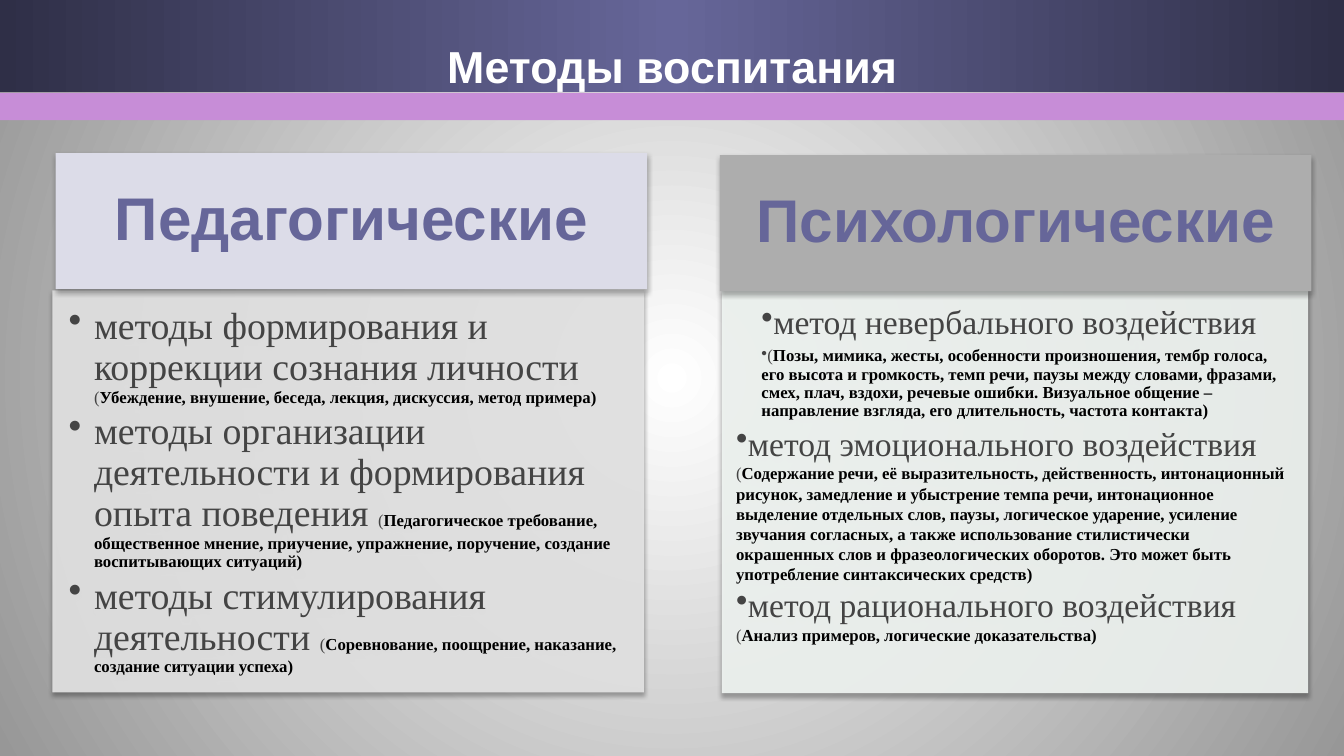
from dataclasses import dataclass
from lxml.etree import SubElement
from pptx import Presentation
from pptx.dml.color import RGBColor
from pptx.enum.shapes import MSO_SHAPE
from pptx.enum.text import MSO_ANCHOR, PP_ALIGN
from pptx.oxml.ns import qn
from pptx.util import Cm, Pt


@dataclass(frozen=True)
class Theme:
    sans: str = "Arial"
    serif: str = "Times New Roman"
    title: int = 32
    head: int = 43
    note: int = 12
    white: str = "FFFFFF"
    black: str = "000000"
    gray: str = "444444"
    violet: str = "666699"
    pink: str = "C78DD7"
    back: tuple = ((0, "FFFFFF"), (100, "979797"))
    band: tuple = ((0, "2F2F47"), (50, "666699"), (100, "2F2F47"))


THEME = Theme()
WIDE, HIGH = 33.87, 19.05
TITLE = "Методы воспитания"

# (lead, note, indent, hanging, line spacing, space after)
PANELS = [
    {
        "head": "Педагогические",
        "top": (1.4, 3.86, 14.91, 3.43, "DCDCE8"),
        "body": (1.32, 7.32, 14.91, 10.13, "E6E6E6"),
        "pads": (0.41, 0.41, 0.53, 0.61),
        "size": 27,
        "items": [
            ("методы формирования и коррекции сознания личности ",
             "Убеждение, внушение, беседа, лекция, дискуссия, метод примера)",
             0.64, -0.64, 0.9, 4),
            ("методы организации деятельности и формирования опыта поведения ",
             "Педагогическое требование, общественное мнение, приучение, "
             "упражнение, поручение, создание воспитывающих ситуаций)",
             0.64, -0.64, 0.9, 4),
            ("методы стимулирования деятельности ",
             "Соревнование, поощрение, наказание, создание ситуации успеха)",
             0.64, -0.64, 0.9, 4),
        ],
    },
    {
        "head": "Психологические",
        "top": (18.14, 3.91, 14.91, 3.43, "ADADAD"),
        "body": (18.19, 7.34, 14.78, 10.13, "F2F7F4"),
        "pads": (0.36, 0.36, 0.48, 0.53),
        "size": 24,
        "items": [
            ("метод невербального воздействия ", "", 0.64, 0, 0.9, 4),
            ("",
             "Позы, мимика, жесты, особенности произношения, тембр голоса, "
             "его высота и громкость, темп речи, паузы между словами, фразами, "
             "смех, плач, вздохи, речевые ошибки. Визуальное общение – "
             "направление взгляда, его длительность, частота контакта)",
             0.64, 0, 0.9, 2),
            ("метод эмоционального воздействия ",
             "Содержание речи, её выразительность, действенность, "
             "интонационный рисунок, замедление и убыстрение темпа речи, "
             "интонационное выделение отдельных слов, паузы, логическое "
             "ударение, усиление звучания согласных, а также использование "
             "стилистически окрашенных слов и фразеологических оборотов. "
             "Это может быть употребление синтаксических средств)",
             0, 0, 1.0, 0),
            ("метод рационального воздействия ",
             "Анализ примеров, логические доказательства)", 0, 0, 1.0, 0),
        ],
    },
]


def color(code):
    return RGBColor.from_string(code)


def blend(root, stops, round_=False):
    grad = root.find(".//" + qn("a:gradFill"))
    for child in list(grad):
        grad.remove(child)
    row = SubElement(grad, qn("a:gsLst"))
    for pos, code in stops:
        stop = SubElement(row, qn("a:gs"), pos=str(pos * 1000))
        SubElement(stop, qn("a:srgbClr"), val=code)
    if round_:
        way = SubElement(grad, qn("a:path"), path="circle")
        SubElement(way, qn("a:fillToRect"),
                   {side: "50000" for side in "ltrb"})
    else:
        SubElement(grad, qn("a:lin"), ang="0", scaled="0")


def block(slide, left, top, width, height, code):
    shape = slide.shapes.add_shape(
        MSO_SHAPE.RECTANGLE, Cm(left), Cm(top), Cm(width), Cm(height))
    shape.fill.solid()
    shape.fill.fore_color.rgb = color(code)
    shape.line.fill.background()
    shape.shadow.inherit = False
    return shape


def shade(shape):
    effects = shape.element.spPr.find(qn("a:effectLst"))
    drop = SubElement(effects, qn("a:outerShdw"), blurRad=str(Pt(3.5)),
                      dist=str(Pt(2.2)), dir="5400000", rotWithShape="0")
    tint = SubElement(drop, qn("a:srgbClr"), val=THEME.black)
    SubElement(tint, qn("a:alpha"), val="32000")


def frame(shape, pads, anchor):
    text = shape.text_frame
    text.word_wrap = True
    text.vertical_anchor = anchor
    (text.margin_left, text.margin_top,
     text.margin_right, text.margin_bottom) = [Cm(pad) for pad in pads]
    return text


def label(shape, words, size, code, pads):
    para = frame(shape, pads, MSO_ANCHOR.MIDDLE).paragraphs[0]
    para.text = words
    para.alignment = PP_ALIGN.CENTER
    para.line_spacing = 0.9
    font = para.font
    font.name, font.size, font.bold = THEME.sans, Pt(size), True
    font.color.rgb = color(code)


def item(para, size, lead, note, indent, hang, pitch, after):
    para.alignment = PP_ALIGN.LEFT
    para.line_spacing = pitch
    para.space_after = Pt(after)
    para.font.name = THEME.serif
    props = para._p.get_or_add_pPr()
    props.set("marL", str(Cm(indent)))
    props.set("indent", str(Cm(hang)))
    mark = SubElement(props, qn("a:buChar"), char="•")
    props.find(qn("a:defRPr")).addprevious(mark)
    parts = [(lead, size, THEME.gray, False)]
    if note:
        parts += [("(", THEME.note, THEME.gray, False),
                  (note, THEME.note, THEME.black, True)]
    for words, points, code, bold in parts:
        if words:
            run = para.add_run()
            run.text = words
            run.font.size, run.font.bold = Pt(points), bold
            run.font.color.rgb = color(code)


def panel(slide, data):
    body = block(slide, *data["body"])
    tint = body.element.spPr.find(qn("a:solidFill"))[0]
    SubElement(tint, qn("a:alpha"), val="90000")
    shade(body)
    text = frame(body, data["pads"], MSO_ANCHOR.TOP)
    for num, entry in enumerate(data["items"]):
        para = text.add_paragraph() if num else text.paragraphs[0]
        item(para, data["size"], *entry)
    head = block(slide, *data["top"])
    shade(head)
    label(head, data["head"], THEME.head, THEME.violet,
          (0.84, 0.48, 0.84, 0.48))


def main():
    deck = Presentation()
    deck.slide_width, deck.slide_height = Cm(WIDE), Cm(HIGH)
    slide = deck.slides.add_slide(deck.slide_layouts[6])
    slide.background.fill.gradient()
    blend(slide.element, THEME.back, True)
    band = block(slide, 0, 0, WIDE, 2.31, THEME.violet)
    band.fill.gradient()
    blend(band.element, THEME.band)
    block(slide, 0, 2.34, WIDE, 0.69, THEME.pink)
    title = slide.shapes.add_textbox(Cm(2.34), Cm(1.02), Cm(29.21), Cm(1.45))
    label(title, TITLE, THEME.title, THEME.white, (0.25, 0.13, 0.25, 0.13))
    for data in PANELS:
        panel(slide, data)
    deck.save("out.pptx")


if __name__ == "__main__":
    main()
